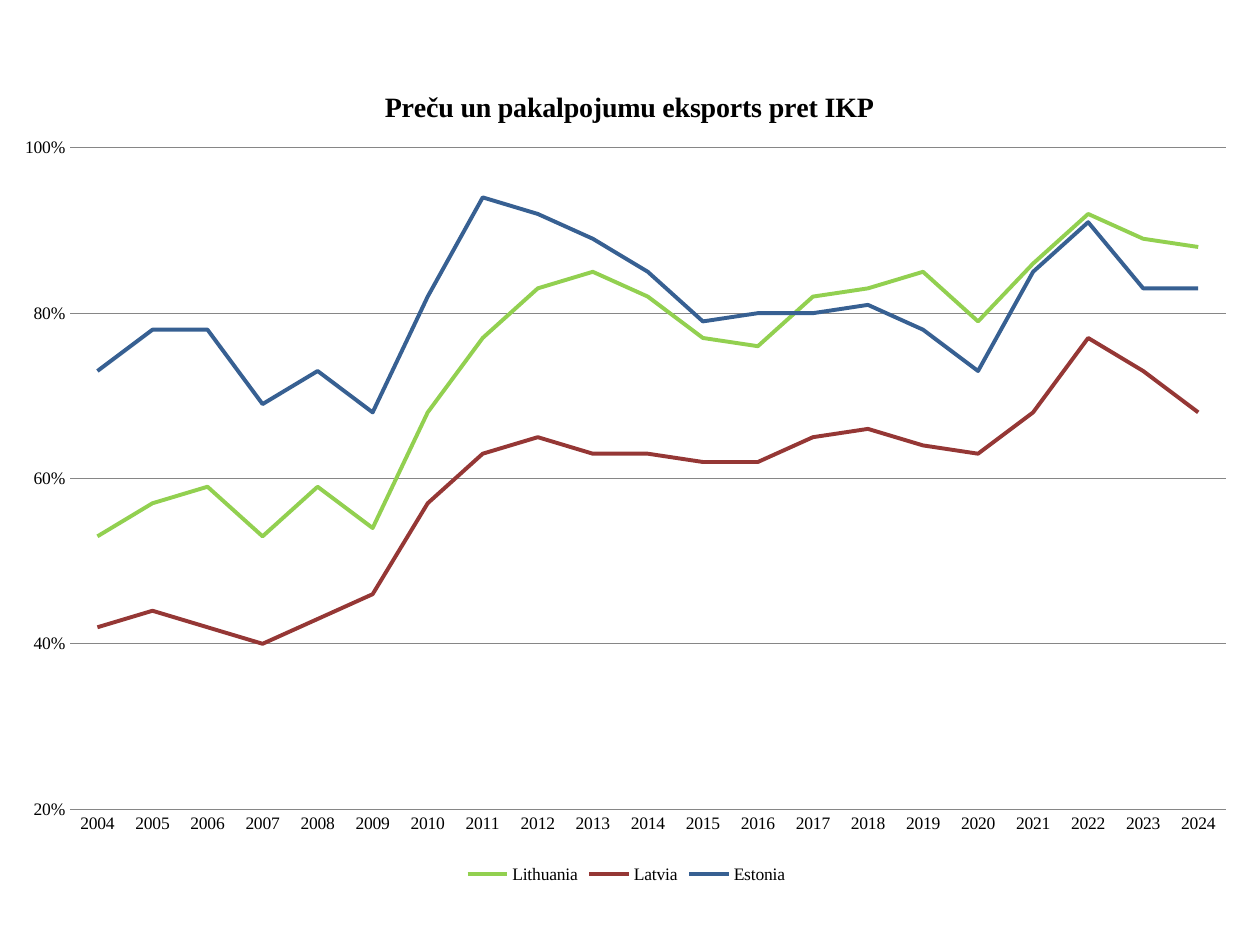
import pptx
import pptx.chart.data
import pptx.dml.color
import pptx.enum.chart
import pptx.oxml
import pptx.oxml.ns
import pptx.util

Pt = pptx.util.Pt
enum = pptx.enum.chart

TITLE = "Preču un pakalpojumu eksports pret IKP"
YEARS = [str(year) for year in range(2004, 2025)]
LINES = [
    ("Lithuania", "92D050",
     [0.53, 0.57, 0.59, 0.53, 0.59, 0.54, 0.68, 0.77, 0.83, 0.85, 0.82,
      0.77, 0.76, 0.82, 0.83, 0.85, 0.79, 0.86, 0.92, 0.89, 0.88]),
    ("Latvia", "953735",
     [0.42, 0.44, 0.42, 0.4, 0.43, 0.46, 0.57, 0.63, 0.65, 0.63, 0.63,
      0.62, 0.62, 0.65, 0.66, 0.64, 0.63, 0.68, 0.77, 0.73, 0.68]),
    ("Estonia", "376092",
     [0.73, 0.78, 0.78, 0.69, 0.73, 0.68, 0.82, 0.94, 0.92, 0.89, 0.85,
      0.79, 0.8, 0.8, 0.81, 0.78, 0.73, 0.85, 0.91, 0.83, 0.83]),
]
THEME = {"font": "Times New Roman", "text": "000000", "grid": "868686",
         "body": 10, "title": 16, "line": 2.25, "rule": 0.75}
WIDE, HIGH = 715, 478
PLOT = (40, 53.5, 660.5, 378)
HEAD = (217, 17)
KEY = (264, 462)


def color(name):
    return pptx.dml.color.RGBColor.from_string(name)


def style(font, size, bold=False):
    font.name = THEME["font"]
    font.size = Pt(size)
    font.bold = bold
    font.color.rgb = color(THEME["text"])


def place(owner, spot, index, inner=False):
    for old in owner.findall(pptx.oxml.ns.qn("c:layout")):
        owner.remove(old)
    modes = '<c:layoutTarget val="inner"/>' if inner else ""
    modes += '<c:xMode val="edge"/><c:yMode val="edge"/>'
    sizes = "".join(f'<c:{tag} val="{part / whole:.4f}"/>' for tag, part, whole
                    in zip("xywh", spot, (WIDE, HIGH) * 2))
    owner.insert(index, pptx.oxml.parse_xml(
        f'<c:layout {pptx.oxml.ns.nsdecls("c")}><c:manualLayout>'
        f'{modes}{sizes}</c:manualLayout></c:layout>'))


def rule(line):
    line.color.rgb = color(THEME["grid"])
    line.width = Pt(THEME["rule"])


def main():
    deck = pptx.Presentation()
    deck.slide_width, deck.slide_height = Pt(720), Pt(540)
    slide = deck.slides.add_slide(deck.slide_layouts[6])

    data = pptx.chart.data.CategoryChartData(number_format="0%")
    data.categories = YEARS
    for name, _, values in LINES:
        data.add_series(name, values)
    chart = slide.shapes.add_chart(
        enum.XL_CHART_TYPE.LINE, Pt(0), Pt(31), Pt(WIDE), Pt(HIGH), data).chart
    style(chart.font, THEME["body"])

    chart.has_title = True
    frame = chart.chart_title.text_frame
    frame.text = TITLE
    style(frame.paragraphs[0].font, THEME["title"], True)
    chart.chart_title.include_in_layout = False

    chart.has_legend = True
    chart.legend.position = enum.XL_LEGEND_POSITION.BOTTOM
    chart.legend.include_in_layout = False

    for axis in (chart.category_axis, chart.value_axis):
        axis.major_tick_mark = axis.minor_tick_mark = enum.XL_TICK_MARK.NONE
    rule(chart.category_axis.format.line)
    scale = chart.value_axis
    scale.minimum_scale, scale.maximum_scale, scale.major_unit = 0.2, 1, 0.2
    scale.tick_labels.number_format = "0%"
    scale.tick_labels.number_format_is_linked = False
    scale.format.line.fill.background()
    rule(scale.major_gridlines.format.line)

    chart.plots[0].vary_by_categories = False
    for series, (_, hue, _) in zip(chart.plots[0].series, LINES):
        series.smooth = False
        series.marker.style = enum.XL_MARKER_STYLE.NONE
        series.format.line.color.rgb = color(hue)
        series.format.line.width = Pt(THEME["line"])

    root = chart.element.chart
    place(root.plotArea, PLOT, 0, True)
    place(root.find(pptx.oxml.ns.qn("c:title")), HEAD, 1)
    place(root.find(pptx.oxml.ns.qn("c:legend")), KEY, 1)
    deck.save("out.pptx")


if __name__ == "__main__":
    main()
